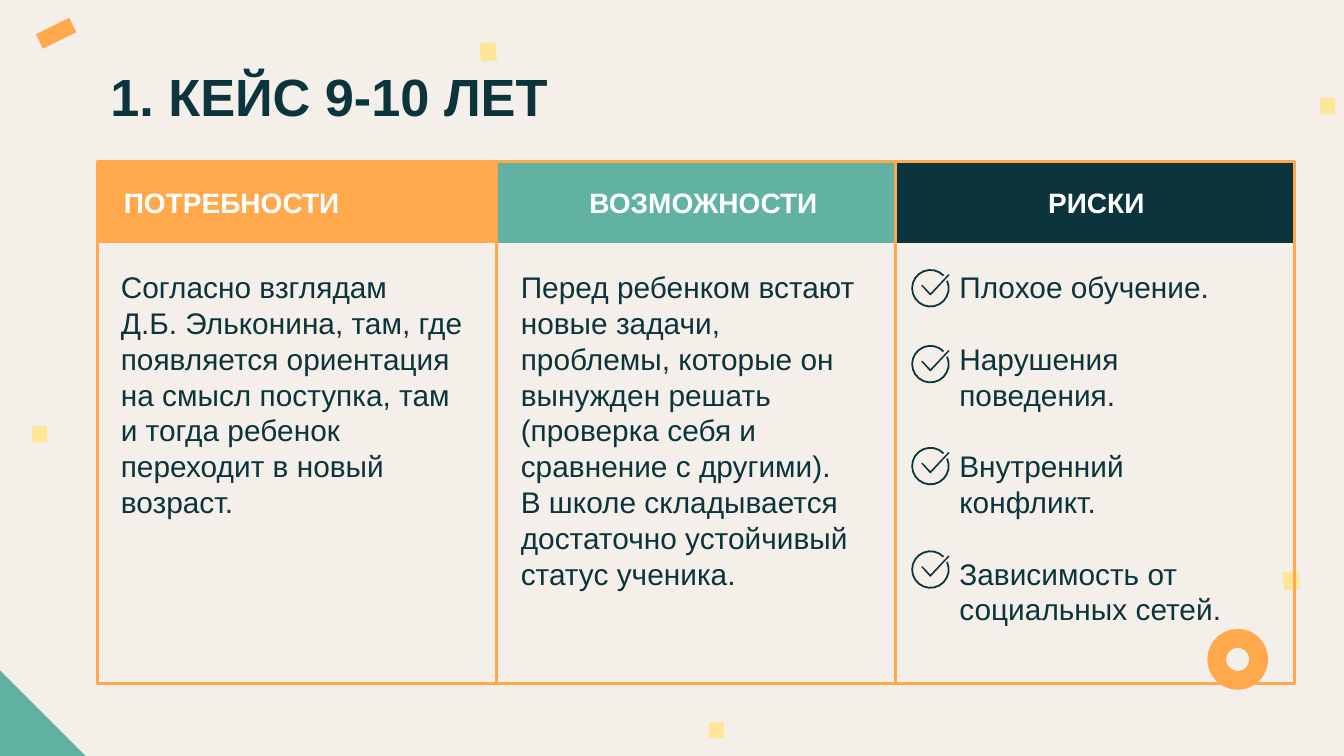
from math import cos, sin, radians
from pptx import Presentation
from pptx.dml.color import RGBColor
from pptx.enum.shapes import MSO_SHAPE
from pptx.enum.text import PP_ALIGN
from pptx.util import Pt

COLORS = {"bg": "F4F0E9", "orange": "FFA84C", "green": "62B2A3",
          "navy": "0C343D", "yellow": "FFE599", "white": "FFFFFF"}
FONT = "Arial"
TITLE = "1. КЕЙС 9-10 ЛЕТ"
COLUMNS = [
    {"head": "ПОТРЕБНОСТИ", "color": "orange", "head_box": (80.2, 170.6), "wrap": False,
     "body_box": (79.2, 265.7), "gap": 0,
     "body": ["Согласно взглядам",
              "Д.Б. Эльконина, там, где появляется ориентация на смысл поступка, "
              "там и тогда ребенок переходит в новый возраст."]},
    {"head": "ВОЗМОЖНОСТИ", "color": "green", "head_box": (364.9, 275), "wrap": True,
     "body_box": (364.9, 265.7), "gap": 0,
     "body": ["Перед ребенком встают новые задачи, проблемы, которые он вынужден решать "
              "(проверка себя и сравнение с другими).",
              "В школе складывается достаточно устойчивый статус ученика."]},
    {"head": "РИСКИ", "color": "navy", "head_box": (649.9, 266.4), "wrap": True,
     "body_box": (678.2, 228.2), "gap": 25.57,
     "body": ["Плохое обучение.", "Нарушения поведения.", "Внутренний конфликт.",
              "Зависимость от социальных сетей."]},
]
DECOR = [
    (26.8, 18, 26.6, 11.5, 333.7, "orange"),
    (-12, 481.4, 64.8, 127.4, 315, "green"),
    (22.8, 304.4, 10.8, 11.5, 0, "yellow"),
    (942.9, 70, 10.8, 11.5, 0, "yellow"),
    (506.4, 516, 10.8, 11.5, 0, "yellow"),
    (342.2, 31.3, 13, 11.5, 84.9, "yellow"),
    (915.8, 409, 13, 11.5, 84.9, "yellow"),
]
TABLE_X, TABLE_Y, COL_W = 69.8, 114.6, 285
HEAD_H, FRAME_H, BODY_Y = 59, 373, 188.6
CHECK_X, CHECK_YS = 650.9, (192.2, 246.4, 319.2, 393.1)
CHECK_R, RING_W = 13.7, 1.3
TICK = [(7.9, 11.2), (13.7, 17.3), (26.6, 3.6), (27.3, 4.4), (14, 18.7), (13.3, 18.7), (7.2, 11.9)]


def rgb(name):
    return RGBColor.from_string(COLORS[name])


def paint(sp, fill=None, line=None):
    sp.shadow.inherit = False
    if fill:
        sp.fill.solid()
        sp.fill.fore_color.rgb = rgb(fill)
    else:
        sp.fill.background()
    if line:
        sp.line.color.rgb = rgb(line)
        sp.line.width = Pt(2)
    else:
        sp.line.fill.background()


def add_shape(s, x, y, w, h, kind=MSO_SHAPE.RECTANGLE, fill=None, line=None, rot=0):
    sp = s.shapes.add_shape(kind, Pt(x), Pt(y), Pt(w), Pt(h))
    sp.rotation = rot
    paint(sp, fill, line)
    return sp


def add_text(s, lines, x, y, w, h, size=21.33, pitch=25.57, color="navy", bold=False,
             align=PP_ALIGN.LEFT, wrap=True, gap=0, inset=(7.2, 3.6)):
    tf = s.shapes.add_textbox(Pt(x), Pt(y), Pt(w), Pt(h)).text_frame
    tf.word_wrap = wrap
    tf.margin_left = tf.margin_right = Pt(inset[0])
    tf.margin_top = tf.margin_bottom = Pt(inset[1])
    for i, line in enumerate(lines):
        p = tf.paragraphs[0] if i == 0 else tf.add_paragraph()
        p.alignment = align
        p.line_spacing = Pt(pitch)
        p.space_before = Pt(gap if i else 0)
        r = p.add_run()
        r.text = line
        r.font.name, r.font.size, r.font.bold = FONT, Pt(size), bold
        r.font.color.rgb = rgb(color)


def arc(x, y, radius, degrees):
    return [(x + CHECK_R + radius * cos(radians(d)), y + CHECK_R + radius * sin(radians(d)))
            for d in degrees]


def add_check(s, x, y):
    sweep = range(-24, 317, 17)
    ring = arc(x, y, CHECK_R, sweep) + arc(x, y, CHECK_R - RING_W, reversed(sweep))
    tick = [(x + dx, y + dy) for dx, dy in TICK]
    ring, tick = ([(Pt(px), Pt(py)) for px, py in part] for part in (ring, tick))
    fb = s.shapes.build_freeform(*ring[0])
    fb.add_line_segments(ring[1:], close=True)
    fb.move_to(*tick[0])
    fb.add_line_segments(tick[1:], close=True)
    paint(fb.convert_to_shape(), "navy")


def main():
    prs = Presentation()
    prs.slide_width, prs.slide_height = Pt(960), Pt(540)
    s = prs.slides.add_slide(prs.slide_layouts[6])
    s.background.fill.solid()
    s.background.fill.fore_color.rgb = rgb("bg")

    for x, y, w, h, rot, color in DECOR:
        add_shape(s, x, y, w, h, fill=color, rot=rot)
    donut = add_shape(s, 862.4, 449.3, 43.4, 43.4, MSO_SHAPE.DONUT, "orange")
    donut.adjustments[0] = 0.31

    add_text(s, [TITLE], 69.5, 36.7, 712.8, 60.5, size=37.33, pitch=44.8, bold=True,
             inset=(9.4, 9.4))
    for i, col in enumerate(COLUMNS):
        add_shape(s, TABLE_X + i * COL_W, TABLE_Y, COL_W, HEAD_H, fill=col["color"])
    for i, col in enumerate(COLUMNS):
        add_shape(s, TABLE_X + i * COL_W, TABLE_Y + 0.6, COL_W, FRAME_H, line="orange")
        x, w = col["head_box"]
        add_text(s, [col["head"]], x, 128.9, w, 31.7, size=20, pitch=24, color="white",
                 bold=True, align=PP_ALIGN.CENTER, wrap=col["wrap"])
        x, w = col["body_box"]
        add_text(s, col["body"], x, BODY_Y, w, 266, gap=col["gap"])
    for y in CHECK_YS:
        add_check(s, CHECK_X, y)

    prs.save("out.pptx")


if __name__ == "__main__":
    main()
